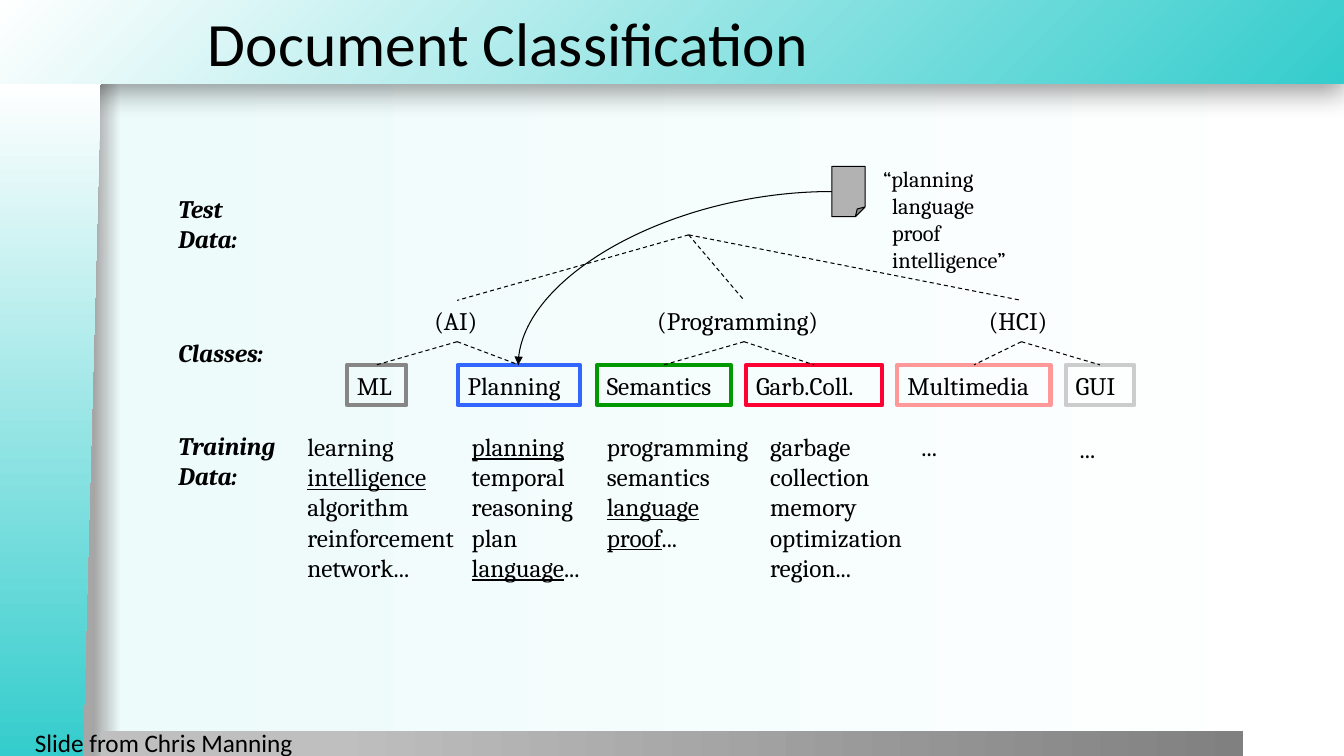
from pptx import Presentation
from pptx.dml.color import RGBColor
from pptx.enum.dml import MSO_LINE
from pptx.enum.shapes import MSO_CONNECTOR, MSO_SHAPE
from pptx.enum.text import MSO_ANCHOR, MSO_AUTO_SIZE, PP_ALIGN
from pptx.oxml import parse_xml
from pptx.oxml.ns import nsdecls, qn
from pptx.util import Inches, Pt

STRAIGHT, CURVE = MSO_CONNECTOR.STRAIGHT, MSO_CONNECTOR.CURVE
RECTANGLE, FOLDED_CORNER = MSO_SHAPE.RECTANGLE, MSO_SHAPE.FOLDED_CORNER
DASH = MSO_LINE.DASH
MIDDLE, GROW = MSO_ANCHOR.MIDDLE, MSO_AUTO_SIZE.SHAPE_TO_FIT_TEXT
LEFT, RIGHT = PP_ALIGN.LEFT, PP_ALIGN.RIGHT

COLORS = {
    "ink": "000000", "teal": "34CCCC", "white": "FFFFFF", "mist": "EDFBFB",
    "edge": "A6A6A6", "band": "BFBFBF", "band_end": "808080", "page": "B2B2B2",
    "ml": "868686", "planning": "3366FF", "semantics": "009900",
    "garbage": "FF0033", "multimedia": "FF9999", "gui": "CCCCCC",
}
TEST_WORDS = ["planning", "language", "proof", "intelligence"]
CLASSES = [
    ("(AI)", 0.77, 0.65, [("ML", "ml", 0, 0.59), ("Planning", "planning", 1.1, 1.21)]),
    ("(Programming)", 2.98, 1.92, [("Semantics", "semantics", 2.48, 1.33),
                                   ("Garb.Coll.", "garbage", 3.96, 1.35)]),
    ("(HCI)", 6.27, 0.84, [("Multimedia", "multimedia", 5.46, 1.52),
                           ("GUI", "gui", 7.13, 0.68)]),
]
TRAINING = [
    (0, 0, 1.76, ["learning", "intelligence", "algorithm", "reinforcement", "network..."]),
    (1.63, 0, 1.41, ["planning", "temporal", "reasoning", "plan", "language..."]),
    (2.97, 0, 1.75, ["programming", "semantics", "language", "proof..."]),
    (4.59, 0, 1.62, ["garbage", "collection", "memory", "optimization", "region..."]),
    (6.09, 0, 0.39, ["..."]),
    (7.66, 0.02, 0.39, ["..."]),
]
ROW_LABELS = [(0, 0.83, "Test\nData:"), (1.43, 1.1, "Classes:"), (2.35, 1.16, "Training\nData:")]

def rgb(name):
    return RGBColor.from_string(COLORS[name])

def set_gradient(fill, element, stops, direction):
    fill.gradient()
    gradient = element.find(".//" + qn("a:gradFill"))
    for child in list(gradient):
        gradient.remove(child)
    marks = "".join(
        f'<a:gs pos="{position * 1000}"><a:srgbClr val="{COLORS[name]}"/></a:gs>'
        for position, name in stops)
    gradient.append(parse_xml(f'<a:gsLst {nsdecls("a")}>{marks}</a:gsLst>'))
    gradient.append(parse_xml(direction))

def linear(degrees):
    return f'<a:lin {nsdecls("a")} ang="{degrees * 60000}" scaled="0"/>'

def style_text(frame, size=18, font="Cambria", emphasis=False, align=LEFT, wrap=False):
    frame.word_wrap = wrap
    if not wrap:
        frame.auto_size = GROW
    for paragraph in frame.paragraphs:
        paragraph.alignment = align
        for run in paragraph.runs:
            run.font.size = Pt(size)
            run.font.name = font
            run.font.bold = run.font.italic = emphasis
            run.font.color.rgb = rgb("ink")

def add_text(slide, left, top, width, text, size=18, **style):
    height = 0.1 + (text.count("\n") + 1) * size / 60
    box = slide.shapes.add_textbox(*(Inches(v) for v in (left, top, width, height)))
    box.text_frame.text = text
    style_text(box.text_frame, size, **style)
    return box.text_frame

def add_line(slide, start, end, kind=STRAIGHT, dash=DASH):
    line = slide.shapes.add_connector(kind, *(Inches(v) for v in (*start, *end)))
    line.line.color.rgb = rgb("ink")
    line.line.width = Pt(0.75)
    if dash:
        line.line.dash_style = dash
    line._element.spPr.append(parse_xml(f'<a:effectLst {nsdecls("a")}/>'))
    return line

def add_box(slide, kind, left, top, width, height, outline=None, weight=0.75):
    box = slide.shapes.add_shape(kind, *(Inches(v) for v in (left, top, width, height)))
    box.shadow.inherit = False
    if outline:
        box.line.color.rgb = rgb(outline)
        box.line.width = Pt(weight)
    else:
        box.line.fill.background()
    return box

def draw_backdrop(slide, width, height, header):
    set_gradient(slide.background.fill, slide.element,
                 [(7, "edge"), (9, "mist"), (100, "white")], linear(0))
    banner = add_box(slide, RECTANGLE, 0, 0, width, header)
    set_gradient(banner.fill, banner._element, [(0, "teal"), (100, "white")],
                 f'<a:path {nsdecls("a")} path="circle">'
                 '<a:fillToRect l="100000" t="100000"/></a:path>')
    banner._element.spPr.find(qn("a:effectLst")).append(parse_xml(
        f'<a:outerShdw {nsdecls("a")} blurRad="{Pt(20)}" dist="{Pt(6)}" dir="5400000">'
        f'<a:srgbClr val="{COLORS["ink"]}"><a:alpha val="40000"/></a:srgbClr></a:outerShdw>'))
    footer_band = add_box(slide, RECTANGLE, 1, height - 0.25, width - 2, 0.25)
    set_gradient(footer_band.fill, footer_band._element,
                 [(20, "band"), (100, "band_end")], linear(0))
    panel_outline = slide.shapes.build_freeform(0, Inches(header))
    panel_outline.add_line_segments([(Inches(x), Inches(y)) for x, y in
                                     [(1, header), (0.82, height), (0, height)]])
    side_panel = panel_outline.convert_to_shape()
    side_panel.shadow.inherit = False
    set_gradient(side_panel.fill, side_panel._element,
                 [(0, "white"), (100, "teal")], linear(90))
    side_panel.line.fill.background()

def draw_title(slide, left, top, width, height):
    title = slide.shapes.title
    slide.shapes._spTree.append(title._element)
    title.left, title.top, title.width, title.height = (
        Inches(v) for v in (left, top, width, height))
    title.text_frame.text = "Document Classification"
    title.text_frame.vertical_anchor = MIDDLE
    style_text(title.text_frame, 44, font="Calibri", wrap=True)

def draw_row_labels(slide, left, top):
    for offset, width, label in ROW_LABELS:
        add_text(slide, left, top + offset, width, label, emphasis=True)

def draw_class_tree(slide, left, top):
    root = (left + 3.39, top)
    leaf_top = top + 1.29
    for group, group_x, group_width, leaves in CLASSES:
        center = left + group_x + group_width / 2
        add_text(slide, left + group_x, top + 0.65, group_width, group)
        add_line(slide, root, (center, top + 0.65))
        for name, color, x, width in leaves:
            leaf = add_box(slide, RECTANGLE, left + x, leaf_top, width, 0.4, color, 3)
            leaf.fill.background()
            leaf.text_frame.text = name
            style_text(leaf.text_frame)
            add_line(slide, (center, top + 1.06), (left + x + width / 2, leaf_top))

def draw_test_document(slide, left, top, target):
    page = add_box(slide, FOLDED_CORNER, left, top, 0.33, 0.5, "ink")
    page._element.spPr.find(".//" + qn("a:avLst")).append(
        parse_xml(f'<a:gd {nsdecls("a")} name="adj" fmla="val 29000"/>'))
    page.fill.solid()
    page.fill.fore_color.rgb = rgb("page")
    quote = add_text(slide, left + 0.41, top - 0.06, 1.57,
                     "“" + "\n".join(TEST_WORDS) + "”", size=16)
    for paragraph in quote.paragraphs[1:]:
        paragraph._p.get_or_add_pPr().set("marL", str(Inches(0.09)))
    arrow = add_line(slide, (left, top + 0.25), target, kind=CURVE, dash=None)
    arrow._element.spPr.find(qn("a:prstGeom")).set("prst", "curvedConnector2")
    arrow._element.spPr.find(qn("a:ln")).append(
        parse_xml(f'<a:tailEnd {nsdecls("a")} type="triangle"/>'))

def draw_training_words(slide, left, top):
    for x, y, width, words in TRAINING:
        column = add_text(slide, left + x, top + y, width, "\n".join(words))
        for paragraph, line in zip(column.paragraphs, words):
            word = line.removesuffix("...")
            if word in TEST_WORDS:
                paragraph.runs[0].text = word
                paragraph.runs[0].font.underline = True
                if word != line:
                    paragraph.add_run().text = "..."
        style_text(column)

def draw_credit(slide, left, top, width):
    add_text(slide, left, top, width, "Slide from Chris Manning",
             font="Calibri", align=RIGHT, wrap=True)

def main():
    deck = Presentation()
    deck.slide_width, deck.slide_height = Inches(13.33), Inches(7.5)
    slide = deck.slides.add_slide(deck.slide_layouts[5])
    draw_backdrop(slide, 13.33, 7.5, 0.83)
    draw_title(slide, 1.96, 0, 11.37, 0.83)
    draw_row_labels(slide, 1.67, 1.87)
    draw_class_tree(slide, 3.44, 2.33)
    draw_test_document(slide, 8.25, 1.65, (5.14, 3.62))
    draw_training_words(slide, 2.95, 4.23)
    draw_credit(slide, 0, 7.17, 3)
    deck.save("out.pptx")

if __name__ == "__main__":
    main()
